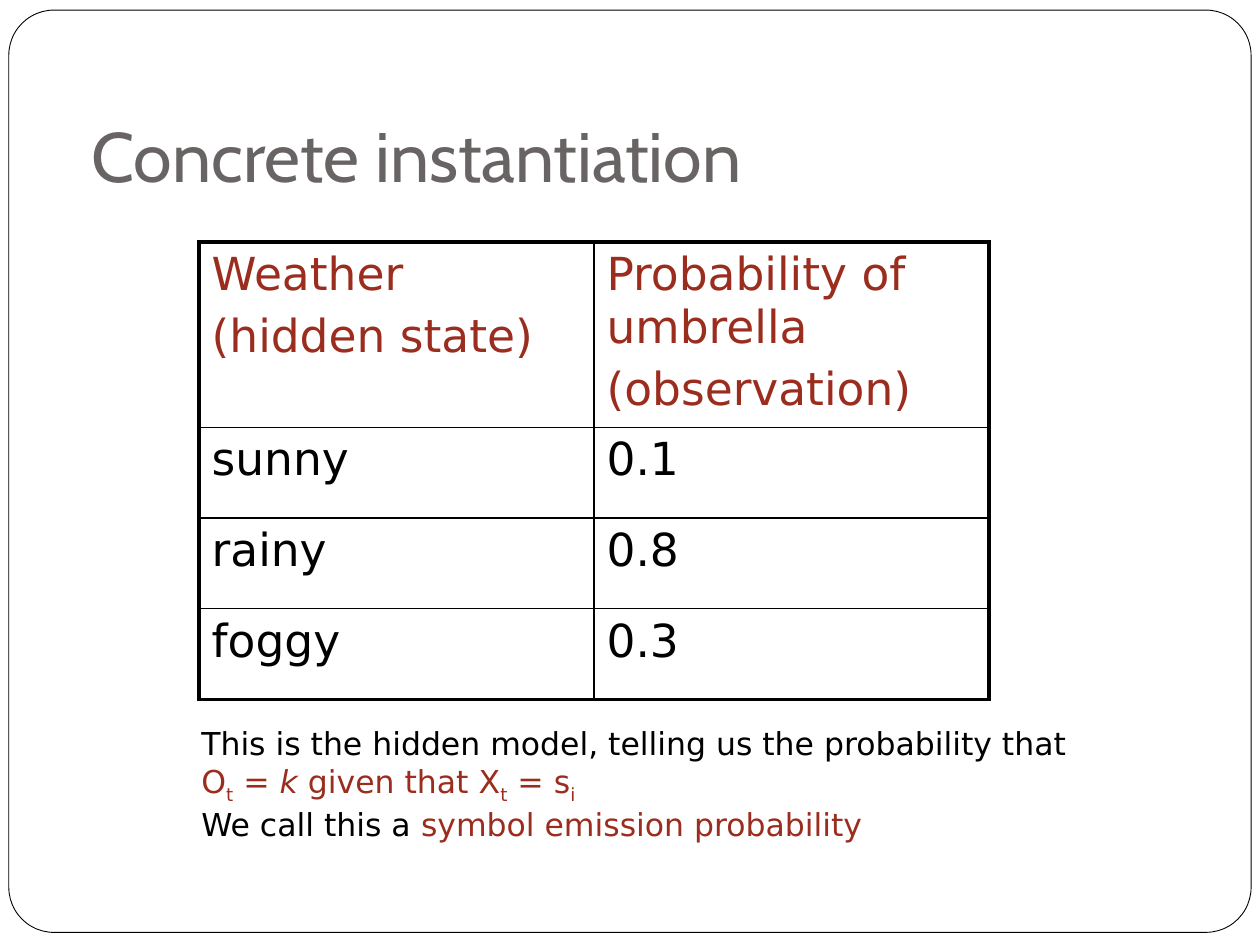
import pptx
import pptx.dml.color
import pptx.enum.shapes
import pptx.enum.text
import pptx.oxml
import pptx.oxml.ns
import pptx.util

Inches = pptx.util.Inches
Pt = pptx.util.Pt

BLACK, WHITE, GREY, RED = "000000", "FFFFFF", "696464", "9B2D1F"
BODY_FONT, TITLE_FONT = "DejaVu Sans", "Cabin"
THIN, THICK = 1, 2.25
ROW_HEIGHT = 0.72

EMISSION_TABLE = [
    (["Weather", "(hidden state)"], ["Probability of umbrella", "(observation)"]),
    (["sunny"], ["0.1"]),
    (["rainy"], ["0.8"]),
    (["foggy"], ["0.3"]),
]


def colour(hex_string):
    return pptx.dml.color.RGBColor.from_string(hex_string)


def add_run(paragraph, text, size, hex_string, font=BODY_FONT, italic=False, subscript=False):
    run = paragraph.add_run()
    run.text = text
    run.font.name = font
    run.font.size = Pt(size)
    run.font.italic = italic
    run.font.color.rgb = colour(hex_string)
    if subscript:
        run.font._element.set("baseline", "-25000")


def add_frame(slide):
    shape = slide.shapes.add_shape(
        pptx.enum.shapes.MSO_SHAPE.ROUNDED_RECTANGLE,
        Inches(0.07), Inches(0.08), Inches(9.86), Inches(7.32))
    shape.adjustments[0] = 0.049
    shape.shadow.inherit = False
    shape.fill.solid()
    shape.fill.fore_color.rgb = colour(WHITE)
    shape.line.color.rgb = colour(BLACK)
    shape.line.width = Pt(0.5)


def add_text_box(slide, left, top, width, height):
    shape = slide.shapes.add_textbox(Inches(left), Inches(top), Inches(width), Inches(height))
    shape.text_frame.word_wrap = True
    return shape.text_frame


def add_title(slide):
    frame = add_text_box(slide, 0.63, 0.33, 8.75, 1.33)
    frame.vertical_anchor = pptx.enum.text.MSO_ANCHOR.BOTTOM
    frame.margin_bottom = Inches(0.1)
    add_run(frame.paragraphs[0], "Concrete instantiation", 40, GREY, TITLE_FONT)


def set_borders(cell, widths):
    properties = cell._tc.get_or_add_tcPr()
    for position, (side, width) in enumerate(widths.items()):
        border = pptx.oxml.parse_xml(
            f'<a:ln{side} {pptx.oxml.ns.nsdecls("a")} w="{Pt(width)}">'
            f'<a:solidFill><a:srgbClr val="{BLACK}"/></a:solidFill></a:ln{side}>')
        properties.insert(position, border)


def fill_cell(cell, lines, hex_string):
    cell.fill.background()
    for index, line in enumerate(lines):
        frame = cell.text_frame
        paragraph = frame.add_paragraph() if index else frame.paragraphs[0]
        paragraph.space_before = Pt(5.2)
        add_run(paragraph, line, 26, hex_string)


def add_emission_table(slide):
    row_count, column_count = len(EMISSION_TABLE), len(EMISSION_TABLE[0])
    table = slide.shapes.add_table(
        row_count, column_count, Inches(1.58), Inches(1.92),
        Inches(6.27), Inches(ROW_HEIGHT * (row_count + 1))).table
    table.horz_banding = False
    for row, entries in enumerate(EMISSION_TABLE):
        table.rows[row].height = Inches(ROW_HEIGHT if row else 2 * ROW_HEIGHT)
        for column, lines in enumerate(entries):
            cell = table.cell(row, column)
            fill_cell(cell, lines, BLACK if row else RED)
            set_borders(cell, {
                "L": THICK if column == 0 else THIN,
                "R": THICK if column == column_count - 1 else THIN,
                "T": THICK if row == 0 else THIN,
                "B": THICK if row == row_count - 1 else THIN,
            })


def add_explanation(slide):
    frame = add_text_box(slide, 1.5, 5.7, 7.27, 1.3)
    model = frame.paragraphs[0]
    add_run(model, "This is the hidden model, telling us the probability that ", 18, BLACK)
    add_run(model, "O", 18, RED)
    add_run(model, "t", 18, RED, subscript=True)
    add_run(model, " = ", 18, RED)
    add_run(model, "k", 18, RED, italic=True)
    add_run(model, " given that X", 18, RED)
    add_run(model, "t", 18, RED, subscript=True)
    add_run(model, " = s", 18, RED)
    add_run(model, "i", 18, RED, subscript=True)
    term = frame.add_paragraph()
    add_run(term, "We call this a ", 18, BLACK)
    add_run(term, "symbol emission probability", 18, RED)


def main():
    presentation = pptx.Presentation()
    presentation.slide_width = Inches(10)
    presentation.slide_height = Inches(7.5)
    slide = presentation.slides.add_slide(presentation.slide_layouts[6])
    add_frame(slide)
    add_title(slide)
    add_emission_table(slide)
    add_explanation(slide)
    presentation.save("out.pptx")


if __name__ == "__main__":
    main()
